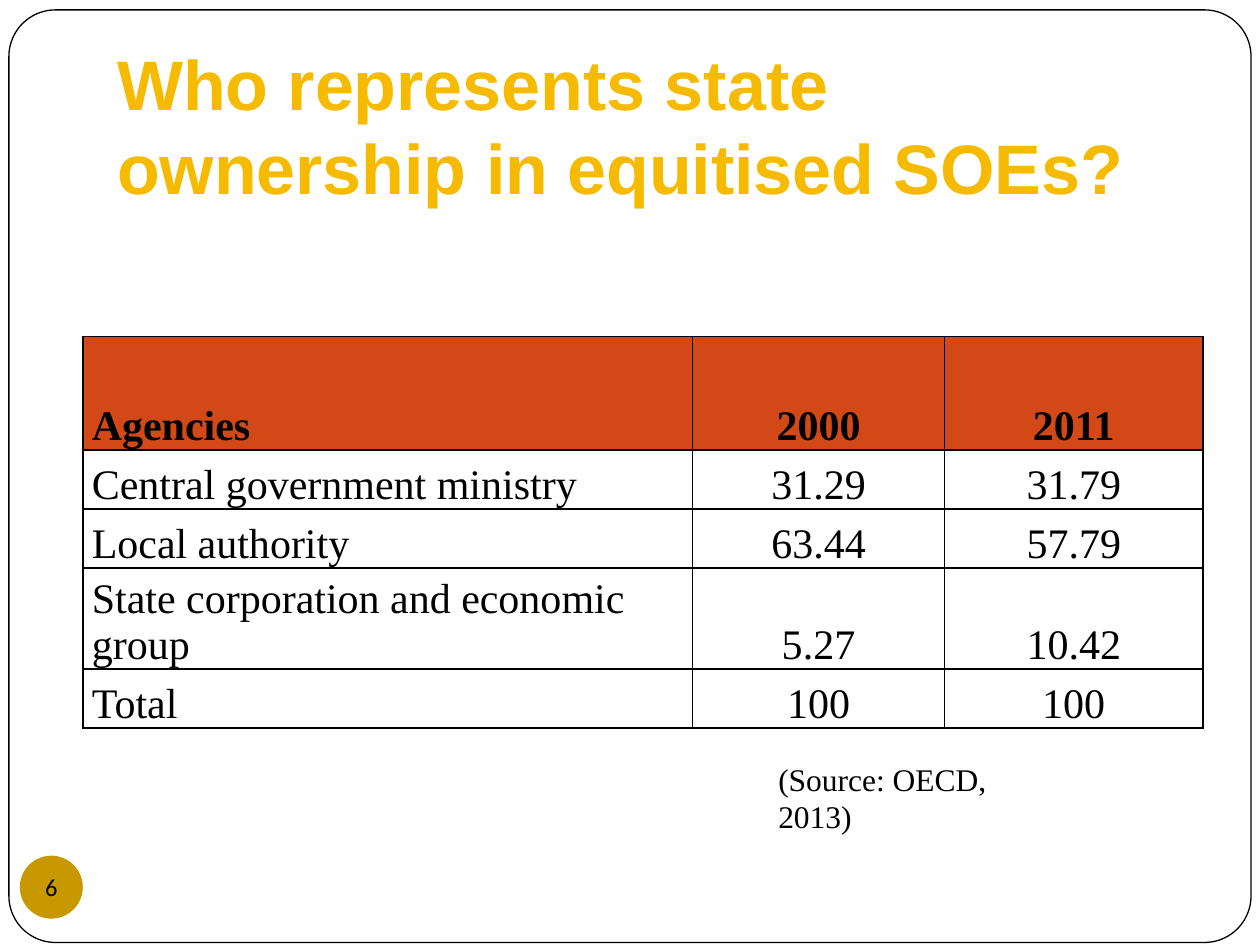
from dataclasses import dataclass

from lxml import etree
from pptx import Presentation
from pptx import util as u
from pptx.dml.color import RGBColor
from pptx.enum import shapes, text
from pptx.oxml import ns

COLOURS = {
    "paper": "FFFFFF",
    "ink": "000000",
    "title": "F6BB00",
    "badge": "C79800",
    "header": "D34817",
}
SERIF = "Times New Roman"
COLUMN_WIDTHS = (12.29, 5.08, 5.21)
ROW_HEIGHTS = (2.29, 1.19, 1.19, 1.19, 1.19)
AGENCIES = (
    ("Agencies", "2000", "2011"),
    ("Central government ministry", "31.29", "31.79"),
    ("Local authority", "63.44", "57.79"),
    ("State corporation and economic group", "5.27", "10.42"),
    ("Total", "100", "100"),
)


@dataclass(frozen=True)
class Box:
    """Position and size in centimetres."""

    left: float
    top: float
    width: float
    height: float

    def lengths(self) -> tuple:
        """Return the four lengths for an add call."""
        return tuple(u.Cm(n) for n in (self.left, self.top, self.width, self.height))


@dataclass(frozen=True)
class Style:
    """Look of a paragraph."""

    size: float
    font: str = SERIF
    colour: str = "ink"
    bold: bool = False
    align: text.PP_ALIGN = text.PP_ALIGN.LEFT


def rgb(name: str) -> RGBColor:
    """Look up a named colour."""
    return RGBColor.from_string(COLOURS[name])


def write(frame, words: str, style: Style) -> None:
    """Put one styled paragraph in a text frame."""
    paragraph = frame.paragraphs[0]
    paragraph.text = words
    paragraph.alignment = style.align
    font = paragraph.font
    font.size, font.name, font.bold = u.Pt(style.size), style.font, style.bold
    font.color.rgb = rgb(style.colour)


def add_text(slide, box: Box, words: str, style: Style, anchor: text.MSO_ANCHOR, bottom: float):
    """Add a wrapping text box."""
    frame = slide.shapes.add_textbox(*box.lengths()).text_frame
    frame.word_wrap = True
    frame.vertical_anchor = anchor
    frame.margin_bottom = u.Cm(bottom)
    write(frame, words, style)
    return frame


def add_shape(slide, kind: shapes.MSO_SHAPE, box: Box, fill: str):
    """Add a flat filled shape without outline."""
    shape = slide.shapes.add_shape(kind, *box.lengths())
    shape.shadow.inherit = False
    shape.fill.solid()
    shape.fill.fore_color.rgb = rgb(fill)
    shape.line.fill.background()
    return shape


def add_borders(cell) -> None:
    """Draw a thin line on every side of a cell."""
    properties = cell._tc.get_or_add_tcPr()
    for side in ("a:lnL", "a:lnR", "a:lnT", "a:lnB"):
        line = etree.SubElement(properties, ns.qn(side), w=str(u.Pt(1)))
        fill = etree.SubElement(line, ns.qn("a:solidFill"))
        etree.SubElement(fill, ns.qn("a:srgbClr"), val=COLOURS["ink"])


def fill_cell(cell, words: str, is_header: bool, is_label: bool) -> None:
    """Style and fill one table cell."""
    cell.margin_left = cell.margin_right = u.Cm(0.18)
    cell.margin_top = cell.margin_bottom = 0
    cell.vertical_anchor = text.MSO_ANCHOR.BOTTOM
    add_borders(cell)
    if is_header:
        cell.fill.solid()
        cell.fill.fore_color.rgb = rgb("header")
    else:
        cell.fill.background()
    align = text.PP_ALIGN.LEFT if is_label else text.PP_ALIGN.CENTER
    write(cell.text_frame, words, Style(24, bold=is_header, align=align))


def add_agencies(slide) -> None:
    """Add the table of ownership shares."""
    box = Box(1.67, 6.78, sum(COLUMN_WIDTHS), sum(ROW_HEIGHTS))
    table = slide.shapes.add_table(len(ROW_HEIGHTS), len(COLUMN_WIDTHS), *box.lengths()).table
    table.first_row = table.horz_banding = False
    for column, width in zip(table.columns, COLUMN_WIDTHS):
        column.width = u.Cm(width)
    for r, (row, height) in enumerate(zip(table.rows, ROW_HEIGHTS)):
        row.height = u.Cm(height)
        for c, cell in enumerate(row.cells):
            fill_cell(cell, AGENCIES[r][c], r == 0, c == 0)


def main() -> None:
    """Build and save the slide."""
    deck = Presentation()
    deck.slide_width, deck.slide_height = u.Cm(25.4), u.Cm(19.05)
    slide = deck.slides.add_slide(deck.slide_layouts[6])

    border = add_shape(
        slide, shapes.MSO_SHAPE.ROUNDED_RECTANGLE, Box(0.18, 0.2, 25.04, 18.8), "paper"
    )
    border.adjustments[0] = 0.05
    border.line.color.rgb = rgb("ink")
    border.line.width = u.Pt(0.75)

    add_text(
        slide,
        Box(2.11, 1.27, 21.59, 3.18),
        "Who represents state ownership in equitised SOEs?",
        Style(40, "Arial", "title", bold=True),
        text.MSO_ANCHOR.BOTTOM,
        0.25,
    )

    badge = add_shape(slide, shapes.MSO_SHAPE.OVAL, Box(0.4, 17.25, 1.27, 1.27), "badge")
    number = badge.text_frame
    number.margin_left = number.margin_right = number.margin_top = number.margin_bottom = 0
    number.vertical_anchor = text.MSO_ANCHOR.MIDDLE
    write(number, "6", Style(14, "Calibri", align=text.PP_ALIGN.CENTER))

    add_agencies(slide)
    source = add_text(
        slide,
        Box(15.44, 15.19, 5.84, 1.02),
        "(Source: OECD, 2013)",
        Style(18),
        text.MSO_ANCHOR.TOP,
        0.13,
    )
    source.auto_size = text.MSO_AUTO_SIZE.SHAPE_TO_FIT_TEXT
    deck.save("out.pptx")


if __name__ == "__main__":
    main()
